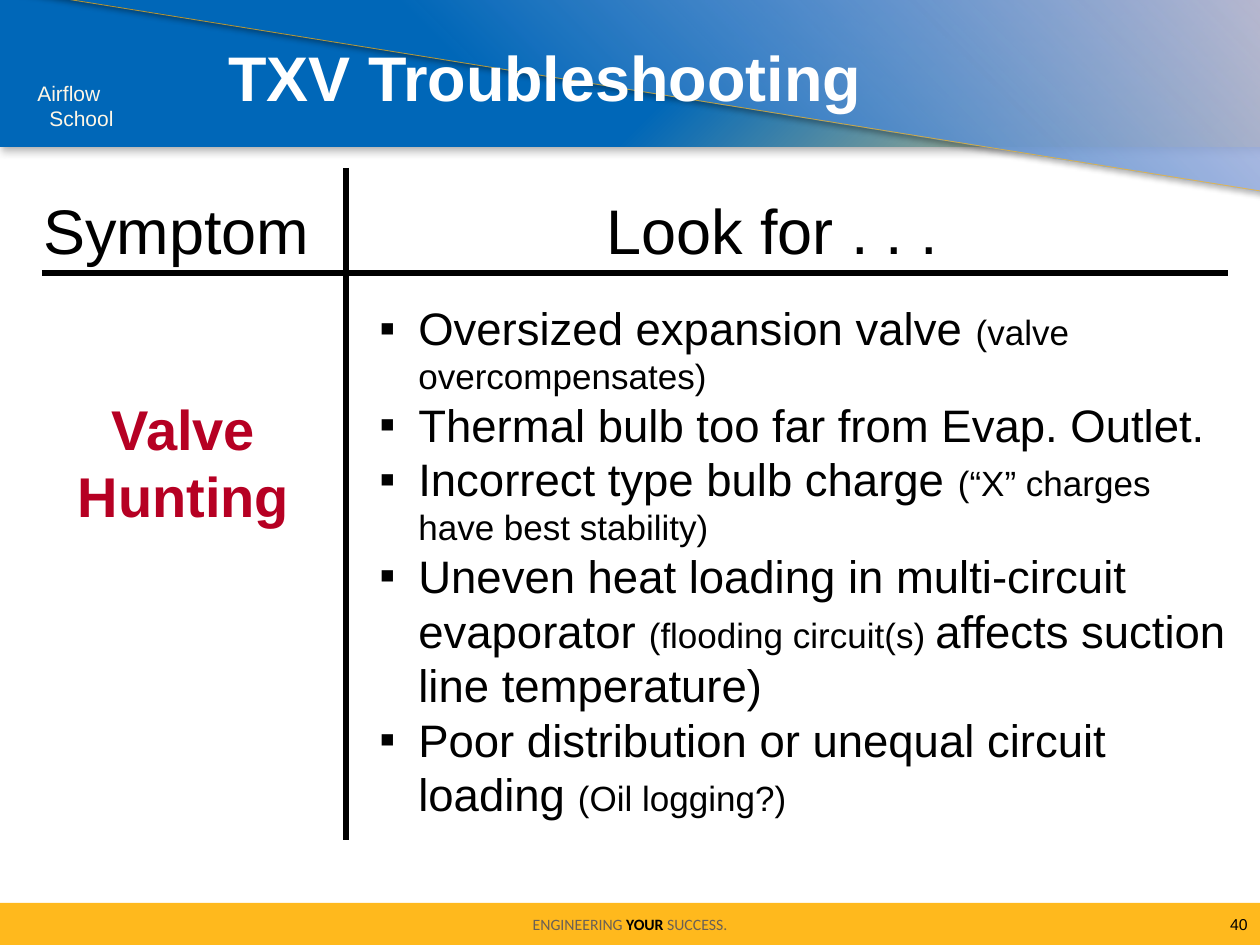
from lxml.etree import SubElement
from pptx import Presentation
from pptx.dml.color import RGBColor
from pptx.enum.shapes import MSO_CONNECTOR as Connector, MSO_SHAPE as Shape
from pptx.enum.text import MSO_ANCHOR as Anchor, PP_ALIGN as Align
from pptx.oxml.ns import qn
from pptx.util import Emu, Pt

EMU_PER_PX = 914400 / 126
COLORS = {
    "blue": "0067B8", "sand": "FFD577", "lilac": "C3C8F8", "gold": "FFB717",
    "footer": "FFB91D", "taupe": "6A6055", "cream": "FFF7E6", "white": "FFFFFF",
    "red": "B60023", "black": "000000", "gray": "999999",
}
BIG, SMALL = 26, 20
CAUSES = [
    [("Oversized expansion valve ", BIG), ("(valve overcompensates)", SMALL)],
    [("Thermal bulb too far from Evap. Outlet.", BIG)],
    [("Incorrect type bulb charge ", BIG),
     ("(“X” charges have best stability)", SMALL)],
    [("Uneven heat loading in multi-circuit evaporator ", BIG),
     ("(flooding circuit(s) ", SMALL),
     ("affects suction line temperature)", BIG)],
    [("Poor distribution or unequal circuit loading ", BIG),
     ("(Oil logging?)", SMALL)],
]


def px(length):
    return Emu(round(length * EMU_PER_PX))


def color(name):
    return RGBColor.from_string(COLORS[name])


def style(font, size, color_name, bold=False, name="Arial"):
    font.name, font.size, font.bold = name, Pt(size), bold
    font.color.rgb = color(color_name)


def set_opacity(parent, percent):
    for srgb in parent.iter(qn("a:srgbClr")):
        SubElement(srgb, qn("a:alpha"), val=str(percent * 1000))


def add_panel(page, kind, left, top, width, height):
    panel = page.shapes.add_shape(kind, px(left), px(top), px(width), px(height))
    panel.shadow.inherit = False
    panel.line.fill.background()
    return panel


def fill_gradient(panel, *stops):
    panel.fill.gradient()
    panel.fill.gradient_angle = 315
    for stop, (position, name) in zip(panel.fill.gradient_stops, stops):
        stop.position = position
        stop.color.rgb = color(name)


def add_shadow(panel, name, opacity, blur, distance, angle):
    effects = panel.element.spPr.find(qn("a:effectLst"))
    shadow = SubElement(effects, qn("a:outerShdw"), blurRad=str(Pt(blur)),
                        dist=str(Pt(distance)), dir=str(angle * 60000),
                        algn="ctr", rotWithShape="0")
    SubElement(shadow, qn("a:srgbClr"), val=COLORS[name])
    set_opacity(shadow, opacity)


def add_text(page, text, left, top, width, height, size, color_name,
             bold=False, align=Align.LEFT, anchor=Anchor.TOP):
    box = page.shapes.add_textbox(px(left), px(top), px(width), px(height))
    frame = box.text_frame
    frame.word_wrap = True
    frame.vertical_anchor = anchor
    frame.text = text
    for para in frame.paragraphs:
        para.alignment = align
        style(para.font, size, color_name, bold)
        for span in para.runs:
            style(span.font, size, color_name, bold)
    return box


def add_spans(para, spans):
    for text, *look in spans:
        span = para.add_run()
        span.text = text
        style(span.font, *look)


def add_bullets(page, items, left, top, width, height):
    box = page.shapes.add_textbox(px(left), px(top), px(width), px(height))
    frame = box.text_frame
    frame.word_wrap = True
    for index, item in enumerate(items):
        para = frame.add_paragraph() if index else frame.paragraphs[0]
        properties = para._p.get_or_add_pPr()
        properties.set("marL", str(px(39)))
        properties.set("indent", str(px(-39)))
        bullet_color = SubElement(properties, qn("a:buClr"))
        SubElement(bullet_color, qn("a:srgbClr"), val=COLORS["black"])
        SubElement(properties, qn("a:buFont"), typeface="Arial")
        SubElement(properties, qn("a:buChar"), char="▪")
        add_spans(para, [(text, size, "black") for text, size in item])


def add_rule(page, x1, y1, x2, y2):
    rule = page.shapes.add_connector(Connector.STRAIGHT,
                                     px(x1), px(y1), px(x2), px(y2))
    rule.line.color.rgb = color("black")
    rule.line.width = Pt(3)
    SubElement(rule.element.spPr, qn("a:effectLst"))


def add_header(page):
    band = add_panel(page, Shape.RECTANGLE, -2, 0, 1266, 147)
    fill_gradient(band, (0.54, "blue"), (1, "sand"))
    add_shadow(band, "gray", 75, 5, 3, 45)

    # Right triangle turned on its side
    wedge = add_panel(page, Shape.ISOSCELES_TRIANGLE, 533, -547, 205, 1275)
    wedge.adjustments[0] = 1
    wedge.rotation = 270
    fill_gradient(wedge, (0.4, "blue"), (0.98, "lilac"))
    set_opacity(wedge.fill.gradient_stops[1]._gs, 72)
    wedge.line.color.rgb = color("gold")
    wedge.line.width = Pt(0.5)
    set_opacity(wedge.element.spPr.find(qn("a:ln")), 68)
    add_shadow(wedge, "black", 35, 3.1, 1.8, 90)

    label = add_text(page, "Airflow\nSchool", 25, 74, 113, 63, 12, "cream")
    label.text_frame.paragraphs[1]._p.get_or_add_pPr().set("marL", str(px(12)))
    add_text(page, "TXV Troubleshooting", 216, 9, 969, 134, 36, "white",
             bold=True, anchor=Anchor.MIDDLE)


def add_footer(page):
    footer = add_panel(page, Shape.RECTANGLE, 0, 903, 1260, 42)
    footer.fill.solid()
    footer.fill.fore_color.rgb = color("footer")
    frame = footer.text_frame
    frame.word_wrap = False
    frame.vertical_anchor = Anchor.MIDDLE
    para = frame.paragraphs[0]
    para.alignment = Align.CENTER
    add_spans(para, [("ENGINEERING ", 9, "taupe", False, "Calibri"),
                     ("YOUR ", 9, "black", True, "Calibri"),
                     ("SUCCESS.", 9, "taupe", False, "Calibri")])
    add_text(page, "40", 1104, 904, 156, 40, 9, "black",
             align=Align.RIGHT, anchor=Anchor.MIDDLE)


def main():
    deck = Presentation()
    deck.slide_width, deck.slide_height = px(1260), px(945)
    page = deck.slides.add_slide(deck.slide_layouts[6])
    add_header(page)
    add_footer(page)

    # Symptom and causes
    add_text(page, "Valve Hunting", 31, 388, 305, 149, 32, "red",
             bold=True, align=Align.CENTER)
    add_bullets(page, CAUSES, 367, 294, 872, 546)

    # Column rules and headings
    add_rule(page, 42, 273, 1228, 273)
    add_rule(page, 346, 168, 346, 840)
    add_text(page, "Symptom", 31, 185, 305, 89, 36, "black")
    add_text(page, "Look for . . .", 368, 185, 809, 89, 36, "black",
             align=Align.CENTER)
    deck.save("out.pptx")


if __name__ == "__main__":
    main()
